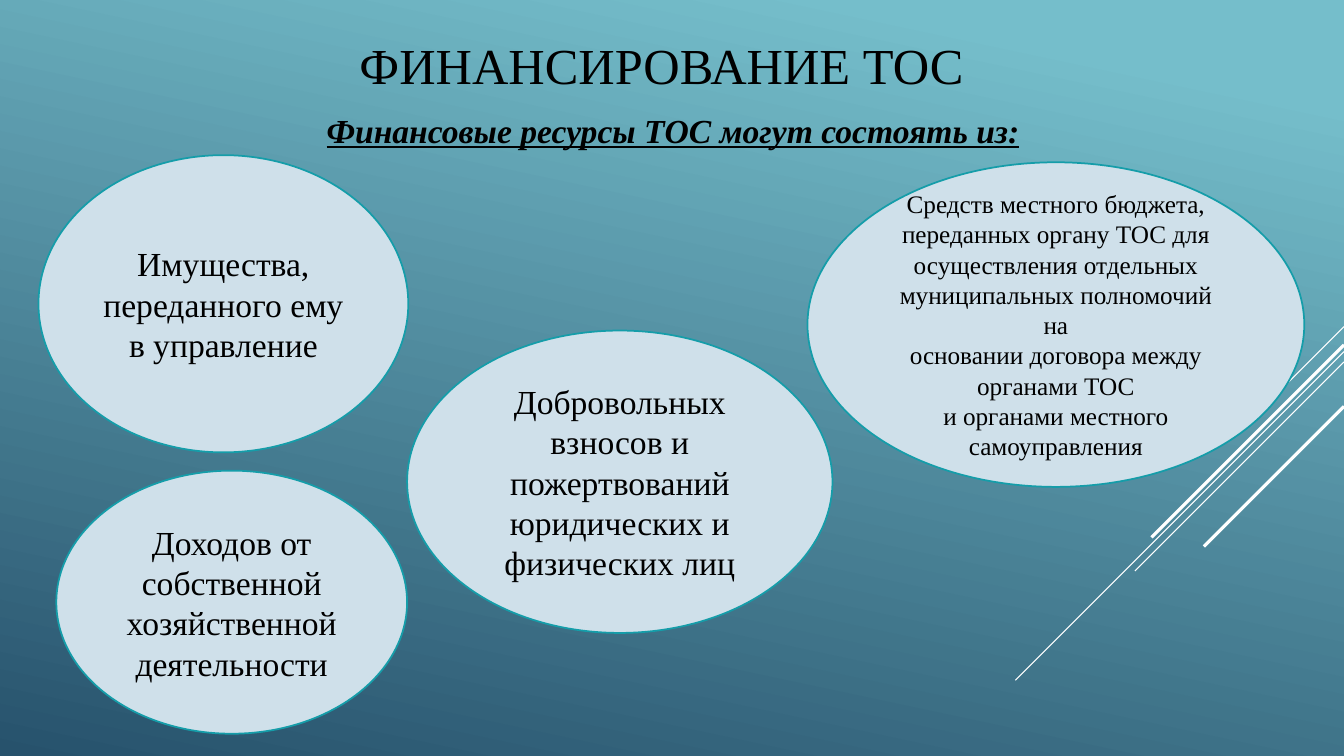
from dataclasses import dataclass

from lxml.etree import SubElement
from pptx import Presentation
from pptx.dml.color import RGBColor
from pptx.enum.shapes import MSO_CONNECTOR as Connector, MSO_SHAPE as Shape
from pptx.enum.text import MSO_ANCHOR as Anchor, PP_ALIGN as Align
from pptx.oxml.ns import qn
from pptx.util import Cm, Pt


@dataclass(frozen=True)
class Theme:
    font: str = "Times New Roman"
    text: RGBColor = RGBColor(0, 0, 0)
    oval_fill: RGBColor = RGBColor(0xCF, 0xE0, 0xEA)
    oval_line: RGBColor = RGBColor(0x15, 0x9D, 0xA9)
    ray: RGBColor = RGBColor(0xFF, 0xFF, 0xFF)
    sky_top: RGBColor = RGBColor(0x75, 0xBE, 0xCB)
    sky_bottom: RGBColor = RGBColor(0x27, 0x52, 0x6C)
    title_size: Pt = Pt(36)
    body_size: Pt = Pt(24)
    small_size: Pt = Pt(18)
    oval_width: Pt = Pt(1.25)
    thin: Pt = Pt(0.75)
    thick: Pt = Pt(2.25)


THEME = Theme()
SLIDE_WIDTH, SLIDE_HEIGHT = 33.87, 19.05

# Start height on the right edge, horizontal run, line width
RAYS = [
    (8.23, 2.54, THEME.thin),
    (8.86, 8.28, THEME.thin),
    (9.12, 5.27, THEME.thin),
    (8.69, 4.85, THEME.thick),
    (10.24, 3.53, THEME.thick),
]

# Left, top, width, height, text size, paragraphs
SOURCES = [
    (0.97, 3.91, 9.32, 7.49, THEME.body_size,
     ["Имущества, переданного ему в управление"]),
    (20.35, 4.09, 12.52, 8.18, THEME.small_size,
     ["Средств местного бюджета, переданных органу ТОС для",
      "осуществления отдельных муниципальных полномочий на",
      "основании договора между органами ТОС",
      "и органами местного самоуправления"]),
    (1.42, 11.86, 8.84, 6.63, THEME.body_size,
     ["Доходов от", "собственной хозяйственной деятельности"]),
    (10.26, 8.33, 10.72, 7.62, THEME.body_size,
     ["Добровольных",
      "взносов и пожертвований юридических и физических лиц"]),
]


def apply_format(target, values):
    for name, value in values.items():
        setattr(target, name, value)


def paint_background(slide):
    fill = slide.background.fill
    fill.gradient()
    fill.gradient_angle = 258
    colours = [(0.1, THEME.sky_top), (1.0, THEME.sky_bottom)]
    for stop, (position, colour) in zip(fill.gradient_stops, colours):
        stop.position = position
        stop.color.rgb = colour


def add_ray(slide, top, run, width):
    """Draw a 45° line down and left from the right edge of the slide."""
    ray = slide.shapes.add_connector(
        Connector.STRAIGHT, Cm(SLIDE_WIDTH), Cm(top),
        Cm(SLIDE_WIDTH - run), Cm(top + run))
    ray.line.color.rgb = THEME.ray
    ray.line.width = width
    SubElement(ray._element.spPr, qn("a:effectLst"))


def write_text(shape, lines, paragraph_format, font_format):
    frame = shape.text_frame
    apply_format(frame, {"word_wrap": True, "vertical_anchor": Anchor.MIDDLE})
    frame.text = "\n".join(lines)
    for paragraph in frame.paragraphs:
        apply_format(paragraph, paragraph_format)
        for run in paragraph.runs:
            apply_format(run.font, {"name": THEME.font, **font_format})
            run.font.color.rgb = THEME.text


def add_heading(slide, box, text, paragraph_format, font_format):
    heading = slide.shapes.add_textbox(*map(Cm, box))
    write_text(heading, [text], paragraph_format, font_format)


def add_source_oval(slide, left, top, width, height, size, lines):
    oval = slide.shapes.add_shape(
        Shape.OVAL, Cm(left), Cm(top), Cm(width), Cm(height))
    oval.shadow.inherit = False
    oval.fill.solid()
    oval.fill.fore_color.rgb = THEME.oval_fill
    oval.line.color.rgb = THEME.oval_line
    oval.line.width = THEME.oval_width
    write_text(oval, lines, {"alignment": Align.CENTER}, {"size": size})


def main():
    presentation = Presentation()
    apply_format(presentation, {"slide_width": Cm(SLIDE_WIDTH),
                                "slide_height": Cm(SLIDE_HEIGHT)})
    slide = presentation.slides.add_slide(presentation.slide_layouts[6])
    paint_background(slide)
    for ray in RAYS:
        add_ray(slide, *ray)
    add_heading(slide, (8.81, -0.15, 16.15, 3.53), "ФИНАНСИРОВАНИЕ ТОС",
                {"alignment": Align.LEFT}, {"size": THEME.title_size})
    add_heading(slide, (7.98, 1.63, 18.64, 3.3),
                "Финансовые ресурсы ТОС могут состоять из:",
                {"alignment": Align.JUSTIFY, "space_after": Pt(6)},
                {"size": THEME.body_size, "bold": True, "italic": True,
                 "underline": True})
    for source in SOURCES:
        add_source_oval(slide, *source)
    presentation.save("out.pptx")


if __name__ == "__main__":
    main()
